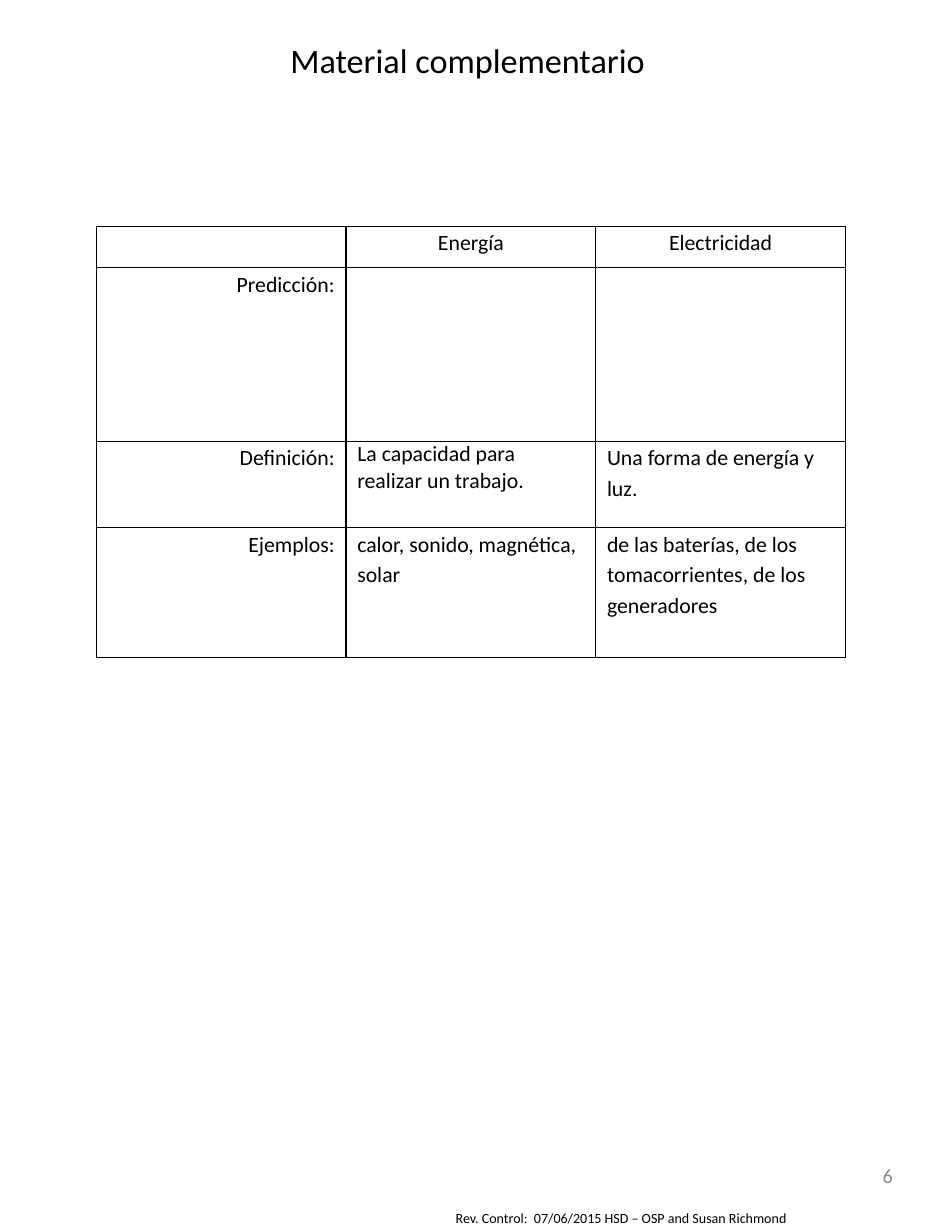
from dataclasses import dataclass

from lxml.etree import SubElement
from pptx import Presentation
from pptx.dml.color import RGBColor
from pptx.enum.text import MSO_ANCHOR, MSO_AUTO_SIZE, PP_ALIGN
from pptx.oxml.ns import qn
from pptx.slide import Slide
from pptx.table import _Cell
from pptx.text.text import TextFrame
from pptx.util import Inches, Pt


@dataclass(frozen=True)
class Theme:
    font: str = "Calibri"
    ink: str = "000000"
    muted: str = "8C8C8C"
    paper: str = "FFFFFF"
    title_size: float = 22
    table_size: float = 14
    number_size: float = 13
    footer_size: float = 9
    border_width: float = 1


@dataclass(frozen=True)
class Box:
    left: float
    top: float
    width: float
    height: float

    def lengths(self) -> tuple[int, ...]:
        return tuple(Inches(n) for n in (self.left, self.top, self.width, self.height))


@dataclass(frozen=True)
class Entry:
    text: str = ""
    align: PP_ALIGN = PP_ALIGN.LEFT
    line_spacing: float = 1.15


@dataclass(frozen=True)
class Row:
    height: float
    entries: tuple[Entry, ...]


def heading(text: str) -> Entry:
    return Entry(text, PP_ALIGN.CENTER)


def label(text: str) -> Entry:
    return Entry(text, PP_ALIGN.RIGHT)


THEME = Theme()
PAGE_WIDTH, PAGE_HEIGHT = 8.5, 11
TITLE_BOX = Box(0.62, 0.3, 7.11, 1.58)
TABLE_BOX = Box(0.86, 2.02, 6.69, 3.85)
FOOTER_BOX = Box(3.97, 10.75, 4.25, 0.26)
NUMBER_BOX = Box(6.09, 10.2, 1.98, 0.59)

ROWS = (
    Row(0.37, (Entry(), heading("Energía"), heading("Electricidad"))),
    Row(1.55, (label("Predicción:"), Entry(), Entry())),
    Row(0.77, (label("Definición:"),
               Entry("La capacidad para realizar un trabajo.", line_spacing=1),
               Entry("Una forma de energía y luz."))),
    Row(1.16, (label("Ejemplos:"),
               Entry("calor, sonido, magnética, solar"),
               Entry("de las baterías, de los tomacorrientes, de los generadores"))),
)


def write(frame: TextFrame, entry: Entry, size: float, color: str = THEME.ink) -> None:
    frame.word_wrap = True
    paragraph = frame.paragraphs[0]
    paragraph.alignment = entry.align
    paragraph.line_spacing = entry.line_spacing
    if entry.text:
        run = paragraph.add_run()
        run.text = entry.text
        run.font.name = THEME.font
        run.font.size = Pt(size)
        run.font.color.rgb = RGBColor.from_string(color)


def add_title(slide: Slide, text: str) -> None:
    title = slide.shapes.title
    title.left, title.top, title.width, title.height = TITLE_BOX.lengths()
    title.text_frame.auto_size = MSO_AUTO_SIZE.NONE
    title.text_frame.vertical_anchor = MSO_ANCHOR.TOP
    write(title.text_frame, Entry(text, PP_ALIGN.CENTER, 1), THEME.title_size)


def add_text(slide: Slide, box: Box, entry: Entry, size: float, color: str,
             anchor: MSO_ANCHOR) -> None:
    frame = slide.shapes.add_textbox(*box.lengths()).text_frame
    frame.vertical_anchor = anchor
    write(frame, entry, size, color)


def outline(cell: _Cell) -> None:
    properties = cell._tc.get_or_add_tcPr()
    for side in ("lnL", "lnR", "lnT", "lnB"):
        line = SubElement(properties, qn(f"a:{side}"), w=str(Pt(THEME.border_width)))
        fill = SubElement(line, qn("a:solidFill"))
        SubElement(fill, qn("a:srgbClr"), val=THEME.ink)


def add_comparison(slide: Slide) -> None:
    column_count = len(ROWS[0].entries)
    table = slide.shapes.add_table(len(ROWS), column_count, *TABLE_BOX.lengths()).table
    table.first_row = table.horz_banding = False
    for column in table.columns:
        column.width = Inches(TABLE_BOX.width / column_count)
    for table_row, row in zip(table.rows, ROWS):
        table_row.height = Inches(row.height)
        for cell, entry in zip(table_row.cells, row.entries):
            cell.margin_left = cell.margin_right = Inches(0.1)
            cell.margin_top = cell.margin_bottom = 0
            outline(cell)
            cell.fill.solid()
            cell.fill.fore_color.rgb = RGBColor.from_string(THEME.paper)
            write(cell.text_frame, entry, THEME.table_size)


def main() -> None:
    deck = Presentation()
    deck.slide_width, deck.slide_height = Inches(PAGE_WIDTH), Inches(PAGE_HEIGHT)
    title_only = deck.slide_layouts[5]
    slide = deck.slides.add_slide(title_only)
    add_text(slide, FOOTER_BOX,
             Entry("Rev. Control:  07/06/2015 HSD – OSP and Susan Richmond", line_spacing=1),
             THEME.footer_size, THEME.ink, MSO_ANCHOR.TOP)
    add_title(slide, "Material complementario")
    add_comparison(slide)
    add_text(slide, NUMBER_BOX, Entry("6", PP_ALIGN.RIGHT, 1),
             THEME.number_size, THEME.muted, MSO_ANCHOR.MIDDLE)
    deck.save("out.pptx")


if __name__ == "__main__":
    main()
